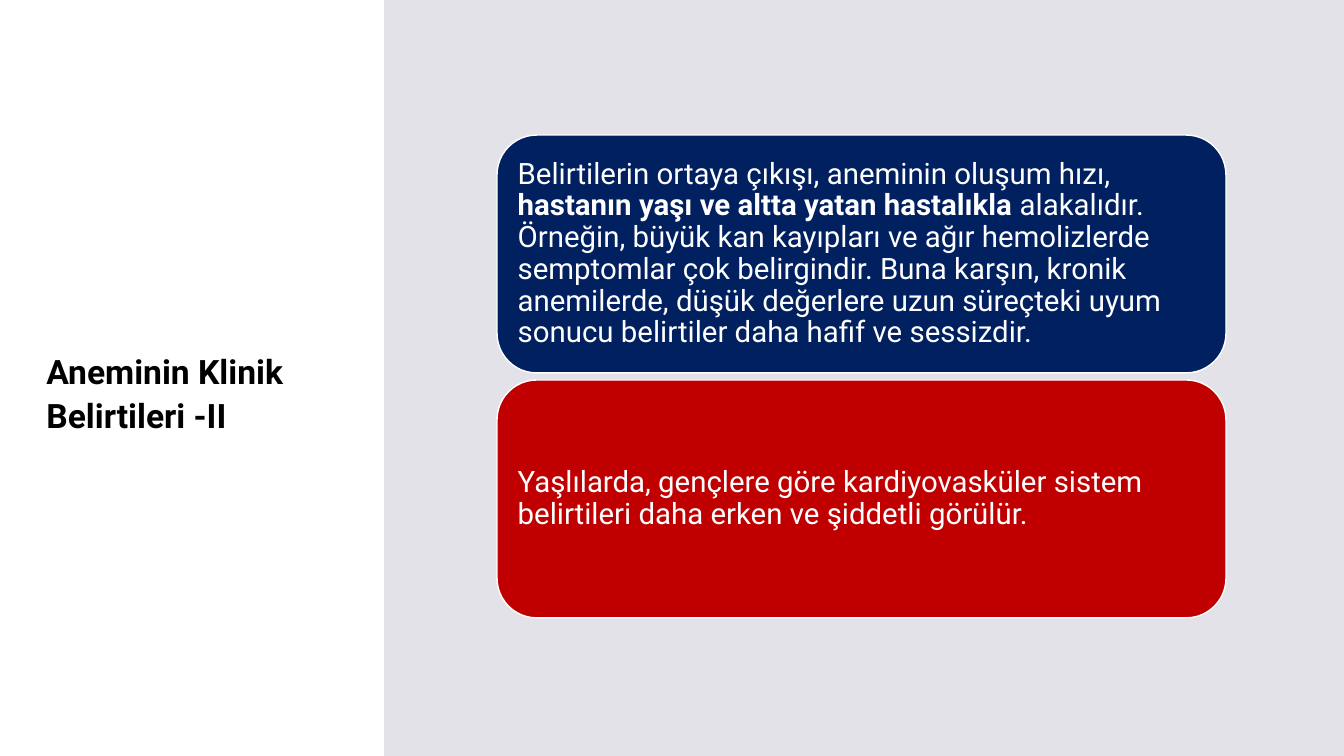
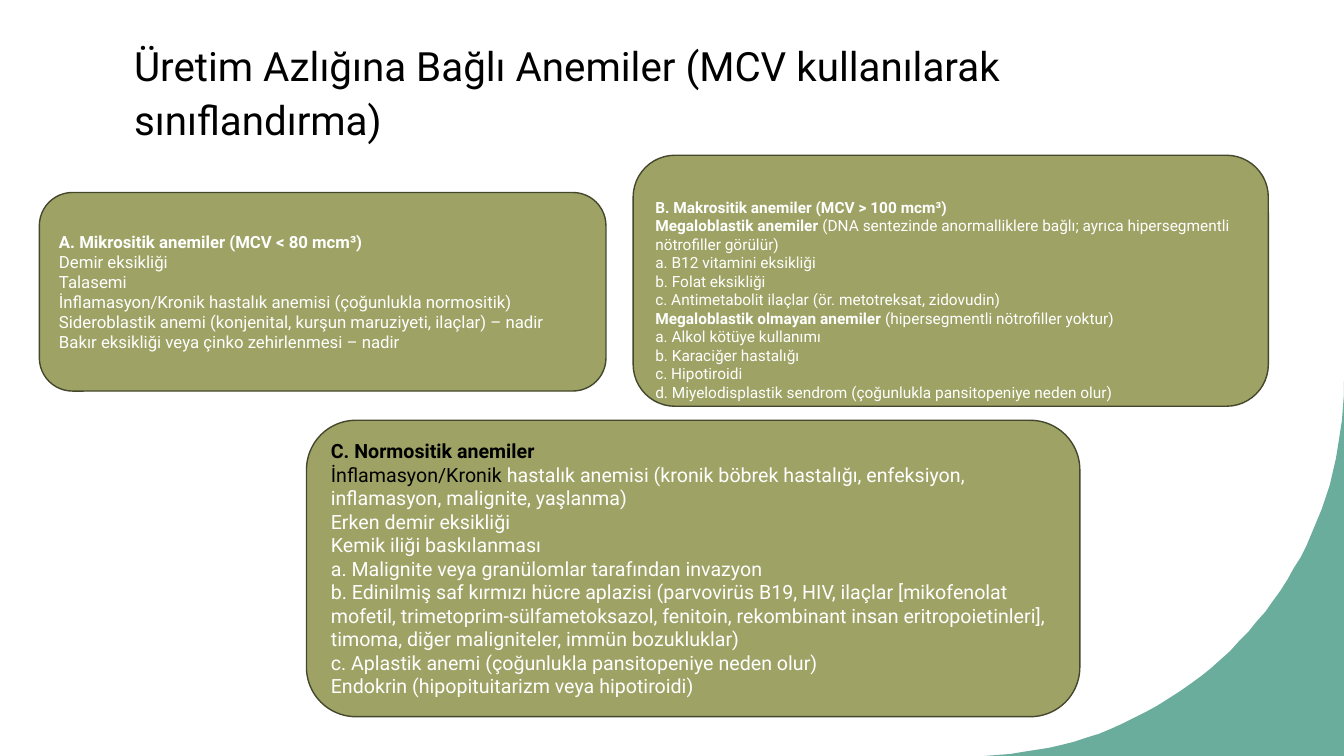
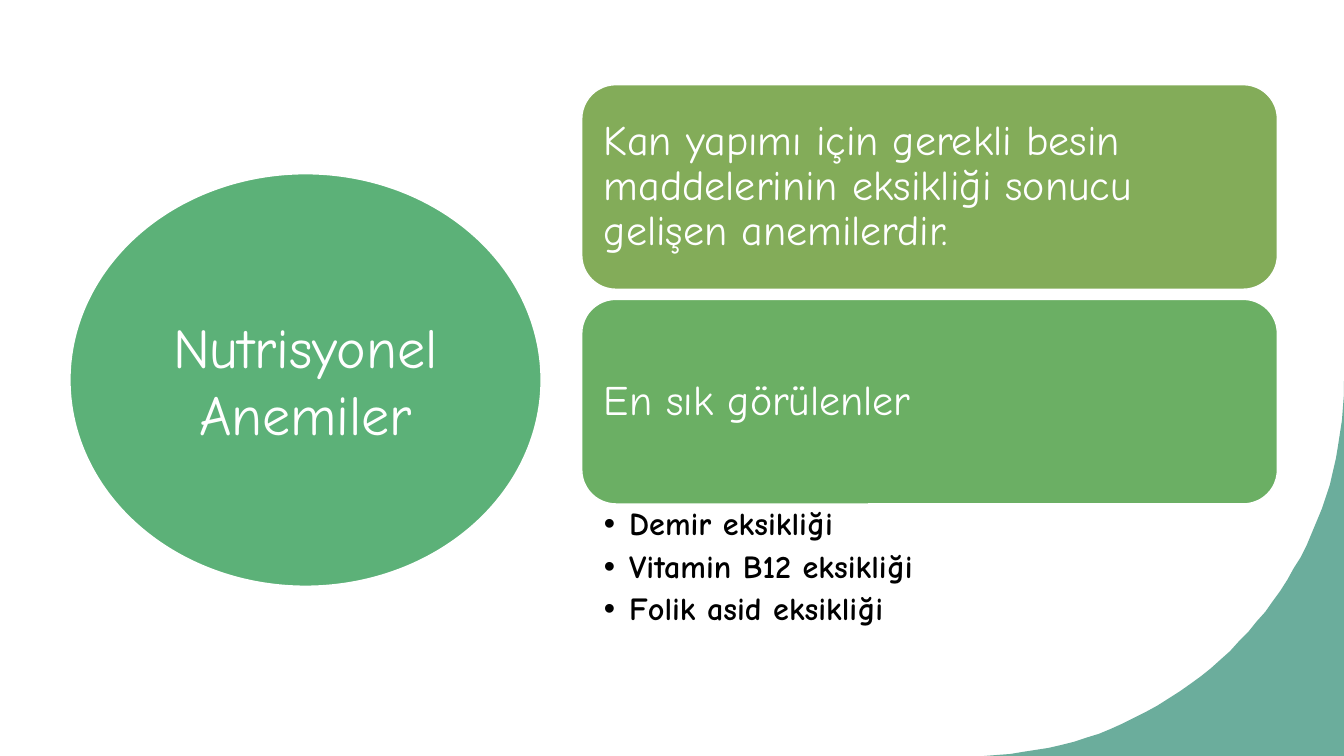
import math
from pptx import Presentation
from pptx import util as u
from pptx.dml import color
from pptx.enum import shapes, text

PX = 9144
ROUND = shapes.MSO_SHAPE.ROUNDED_RECTANGLE
RECT = shapes.MSO_SHAPE.RECTANGLE
OVAL = shapes.MSO_SHAPE.OVAL
TOP, MIDDLE, BOTTOM = text.MSO_ANCHOR.TOP, text.MSO_ANCHOR.MIDDLE, text.MSO_ANCHOR.BOTTOM
LEFT, CENTER = text.PP_ALIGN.LEFT, text.PP_ALIGN.CENTER
TITLE_ONLY, TITLE_BODY = 5, 1
WHITE, BLACK = "FFFFFF", "000000"
TEAL, OLIVE, OLIVE_EDGE = "6BAD9C", "9EA365", "45472C"
ROBOTO, COMIC = "Roboto", "Comic Neue"


def rgb(value):
    return color.RGBColor.from_string(value)


def px(*values):
    return [u.Emu(v * PX) for v in values]


def bold(words):
    return words, {"bold": True}


def black(words):
    return words, {"color": BLACK}


class Deck:
    def __init__(self):
        self.prs = Presentation()
        self.prs.slide_width, self.prs.slide_height = px(1333, 750)
        self.slide = None

    def new_slide(self, layout=TITLE_ONLY):
        self.slide = self.prs.slides.add_slide(self.prs.slide_layouts[layout])

    def paint(self, sp, fill, line=None, width=1):
        sp.shadow.inherit = False
        sp.fill.solid()
        sp.fill.fore_color.rgb = rgb(fill)
        if line:
            sp.line.color.rgb = rgb(line)
            sp.line.width = u.Pt(width)
        else:
            sp.line.fill.background()

    def master_corner(self):
        arc = [(963 + 370 * math.cos(a), 378 + 372 * math.sin(a))
               for a in (math.radians(d) for d in range(0, 91, 2))]
        builder = self.slide.shapes.build_freeform(1333, 750, scale=PX)
        builder.add_line_segments(arc)
        sp = builder.convert_to_shape()
        self.paint(sp, TEAL)
        self.prs.slide_master.shapes.element.insert(2, sp.element)

    def set_text(self, sp, paragraphs, size, font=ROBOTO, ink=WHITE, strong=False, align=LEFT,
                 anchor=MIDDLE, spacing=1.0, after=0, insets=(10, 5, 10, 5)):
        tf = sp.text_frame
        tf.word_wrap = True
        tf.auto_size = text.MSO_AUTO_SIZE.NONE
        tf.vertical_anchor = anchor
        tf.margin_left, tf.margin_top, tf.margin_right, tf.margin_bottom = px(*insets)
        for i, runs in enumerate(paragraphs):
            p = tf.add_paragraph() if i else tf.paragraphs[0]
            p.alignment, p.line_spacing = align, spacing
            p.space_before, p.space_after = u.Pt(0), u.Pt(after)
            p.font.name, p.font.size, p.font.bold = font, u.Pt(size), strong
            p.font.color.rgb = rgb(ink)
            for run in [runs] if isinstance(runs, (str, tuple)) else runs:
                words, style = (run, {}) if isinstance(run, str) else run
                r = p.add_run()
                r.text = words
                if "bold" in style:
                    r.font.bold = True
                if "color" in style:
                    r.font.color.rgb = rgb(style["color"])

    def place(self, sp, box):
        sp.left, sp.top, sp.width, sp.height = px(*box)

    def title(self, words, box, size, strong=False):
        sp = self.slide.shapes.title
        self.place(sp, box)
        self.set_text(sp, [words], size, ink=BLACK, strong=strong, anchor=BOTTOM, spacing=1.1)

    def bullets(self, items, box, size, font):
        sp = self.slide.placeholders[1]
        self.place(sp, box)
        self.set_text(sp, items, size, font, BLACK, True, anchor=TOP, spacing=0.9, after=5.5,
                      insets=(22, 4, 23, 4))
        for p in sp.text_frame.paragraphs:
            pPr = p._p.get_or_add_pPr()
            pPr.set("marL", str(25 * PX))
            pPr.set("indent", str(-25 * PX))

    def remove_title(self):
        sp = self.slide.shapes.title.element
        sp.getparent().remove(sp)

    def panel(self, box, fill, behind=False):
        sp = self.slide.shapes.add_shape(RECT, *px(*box))
        self.paint(sp, fill)
        if behind:
            self.slide.shapes.element.insert(2, sp.element)

    def card(self, box, fill, paragraphs, size, line=WHITE, width=1, kind=ROUND, **style):
        sp = self.slide.shapes.add_shape(kind, *px(*box))
        self.paint(sp, fill, line, width)
        self.set_text(sp, paragraphs, size, **style)


def clinical_signs(deck):
    deck.new_slide()
    deck.master_corner()
    deck.panel((0, 0, 1333, 750), WHITE, behind=True)
    deck.title("Aneminin Klinik Belirtileri -II", (36, 336, 339, 101), 24, strong=True)
    deck.panel((381, 0, 952, 750), "E2E2E8")
    cards = [
        ("002060", ["Belirtilerin ortaya çıkışı, aneminin oluşum hızı, ",
                    bold("hastanın yaşı ve altta yatan hastalıkla "),
                    "alakalıdır. Örneğin, büyük kan kayıpları ve ağır hemolizlerde semptomlar "
                    "çok belirgindir. Buna karşın, kronik anemilerde, düşük değerlere uzun "
                    "süreçteki uyum sonucu belirtiler daha hafif ve sessizdir."]),
        ("C00000", "Yaşlılarda, gençlere göre kardiyovasküler sistem belirtileri daha erken "
                   "ve şiddetli görülür."),
    ]
    for i, (fill, words) in enumerate(cards):
        deck.card((493, 134 + 243 * i, 723, 236), fill, [words], 21, spacing=0.9,
                  insets=(9, 9, 9, 9))


def low_production(deck):
    deck.new_slide()
    deck.title("Üretim Azlığına Bağlı Anemiler (MCV kullanılarak sınıflandırma)",
               (123, 49, 1088, 98), 28.8)
    microcytic = [
        bold("A. Mikrositik anemiler (MCV < 80 mcm³)"),
        "Demir eksikliği",
        "Talasemi",
        "İnflamasyon/Kronik hastalık anemisi (çoğunlukla normositik)",
        "Sideroblastik anemi (konjenital, kurşun maruziyeti, ilaçlar) – nadir",
        "Bakır eksikliği veya çinko zehirlenmesi – nadir",
    ]
    macrocytic = [
        bold("B. Makrositik anemiler (MCV > 100 mcm³)"),
        [bold("Megaloblastik anemiler"),
         " (DNA sentezinde anormalliklere bağlı; ayrıca hipersegmentli nötrofiller görülür)"],
        "a. B12 vitamini eksikliği",
        "b. Folat eksikliği",
        "c. Antimetabolit ilaçlar (ör. metotreksat, zidovudin)",
        [bold("Megaloblastik olmayan anemiler"), " (hipersegmentli nötrofiller yoktur)"],
        "a. Alkol kötüye kullanımı",
        "b. Karaciğer hastalığı",
        "c. Hipotiroidi",
        "d. Miyelodisplastik sendrom (çoğunlukla pansitopeniye neden olur)",
    ]
    normocytic = [
        ("C. Normositik anemiler", {"bold": True, "color": BLACK}),
        [black("İnflamasyon/Kronik "),
         "hastalık anemisi (kronik böbrek hastalığı, enfeksiyon, inflamasyon, malignite, "
         "yaşlanma)"],
        "Erken demir eksikliği",
        "Kemik iliği baskılanması",
        "a. Malignite veya granülomlar tarafından invazyon",
        "b. Edinilmiş saf kırmızı hücre aplazisi (parvovirüs B19, HIV, ilaçlar [mikofenolat "
        "mofetil, trimetoprim-sülfametoksazol, fenitoin, rekombinant insan eritropoietinleri], "
        "timoma, diğer maligniteler, immün bozukluklar)",
        "c. Aplastik anemi (çoğunlukla pansitopeniye neden olur)",
        "Endokrin (hipopituitarizm veya hipotiroidi)",
    ]
    deck.card((39, 191, 562, 197), OLIVE, microcytic, 12, line=OLIVE_EDGE)
    deck.card((628, 154, 630, 249), OLIVE, macrocytic, 11, line=OLIVE_EDGE, anchor=TOP,
              insets=(10, 30, 10, 0))
    deck.card((304, 417, 767, 294), OLIVE, normocytic, 14, line=OLIVE_EDGE)


def nutritional(deck):
    deck.new_slide(TITLE_BODY)
    deck.remove_title()
    cards = [
        ("83AC59", "Kan yapımı için gerekli besin maddelerinin eksikliği sonucu gelişen "
                   "anemilerdir."),
        ("6BAF64", "En sık görülenler"),
    ]
    for i, (fill, words) in enumerate(cards):
        deck.card((577, 84 + 213 * i, 690, 203), fill, [words], 30, font=COMIC, spacing=0.9,
                  insets=(12, 12, 12, 12))
    deck.bullets(["Demir eksikliği", "Vitamin B12 eksikliği", "Folik asid eksikliği"],
                 (577, 500, 690, 149), 23, COMIC)
    deck.card((69, 172, 468, 410), "5CB178", ["Nutrisyonel Anemiler"], 40, width=1.5, kind=OVAL,
              font=COMIC, align=CENTER)


def main():
    deck = Deck()
    for build in (clinical_signs, low_production, nutritional):
        build(deck)
    deck.prs.save("out.pptx")


if __name__ == "__main__":
    main()
